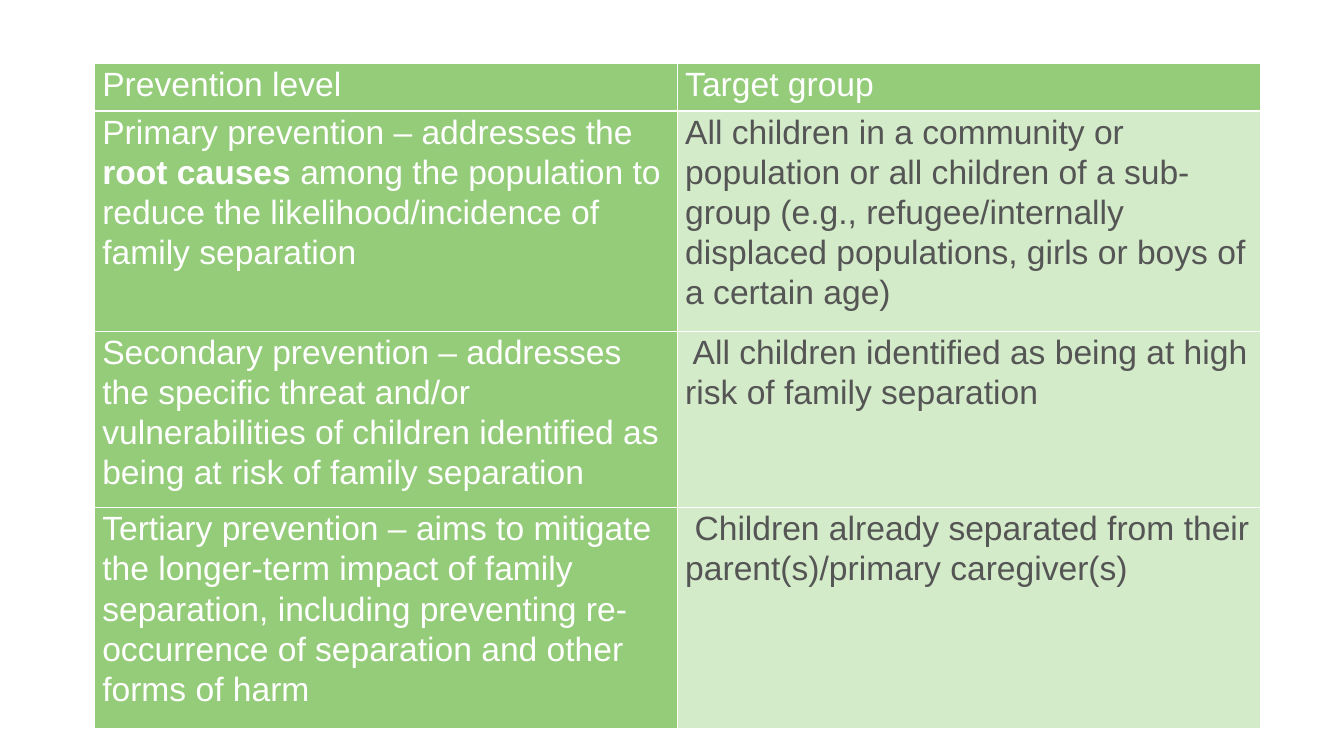
from dataclasses import dataclass

from lxml.etree import SubElement
from pptx import Presentation
from pptx.dml.color import RGBColor
from pptx.oxml.ns import qn
from pptx.util import Pt


@dataclass(frozen=True)
class Theme:
    font: str = "Arial"
    size: float = 24
    line_spacing: float = 1.07
    space_after: float = 8
    side_margin: float = 5.4
    border_width: float = 1
    border: str = "FFFFFF"
    label_fill: str = "94CC7A"
    label_text: str = "FFFFFF"
    detail_fill: str = "D4EBCA"
    detail_text: str = "545554"


class SlideBuilder:
    def __init__(self, slide, theme):
        self.slide = slide
        self.theme = theme

    def add_table(self, left, top, col_width, row_heights, rows):
        cols = len(rows[0])
        frame = self.slide.shapes.add_table(
            len(rows), cols, Pt(left), Pt(top),
            Pt(col_width * cols), Pt(sum(row_heights)))
        table = frame.table
        table.horz_banding = False
        for col in table.columns:
            col.width = Pt(col_width)
        for i, (height, texts) in enumerate(zip(row_heights, rows)):
            table.rows[i].height = Pt(height)
            for j, text in enumerate(texts):
                self.fill_cell(table.cell(i, j), text, i == 0 or j == 0)

    def fill_cell(self, cell, text, is_label):
        th = self.theme
        self.add_borders(cell)
        cell.fill.solid()
        cell.fill.fore_color.rgb = RGBColor.from_string(
            th.label_fill if is_label else th.detail_fill)
        cell.margin_left = cell.margin_right = Pt(th.side_margin)
        cell.margin_top = cell.margin_bottom = Pt(0)
        p = cell.text_frame.paragraphs[0]
        p.line_spacing = th.line_spacing
        p.space_after = Pt(th.space_after)
        for k, part in enumerate(text.split("**")):
            r = p.add_run()
            r.text = part
            r.font.name = th.font
            r.font.size = Pt(th.size)
            r.font.bold = k % 2 == 1
            r.font.color.rgb = RGBColor.from_string(
                th.label_text if is_label else th.detail_text)

    def add_borders(self, cell):
        tc_pr = cell._tc.get_or_add_tcPr()
        for side in ("lnL", "lnR", "lnT", "lnB"):
            ln = SubElement(tc_pr, qn(f"a:{side}"), w=str(Pt(self.theme.border_width)))
            fill = SubElement(ln, qn("a:solidFill"))
            SubElement(fill, qn("a:srgbClr"), val=self.theme.border)


PREVENTION_LEVELS = [
    ("Prevention level", "Target group"),
    ("Primary prevention – addresses the **root causes **among the population "
     "to reduce the likelihood/incidence of family separation",
     "All children in a community or population or all children of a sub-group "
     "(e.g., refugee/internally displaced populations, girls or boys of a certain age)"),
    ("Secondary prevention – addresses the specific threat and/or vulnerabilities "
     "of children identified as being at risk of family separation",
     " All children identified as being at high risk of family separation"),
    ("Tertiary prevention – aims to mitigate the longer-term impact of family "
     "separation, including preventing re-occurrence of separation and other forms of harm",
     " Children already separated from their parent(s)/primary caregiver(s)"),
]


def main():
    prs = Presentation()
    prs.slide_width, prs.slide_height = Pt(960), Pt(540)
    s = prs.slides.add_slide(prs.slide_layouts[6])
    builder = SlideBuilder(s, Theme())
    builder.add_table(67.7, 45.5, 416.4, [33.8, 157.5, 126, 157.5], PREVENTION_LEVELS)
    prs.save("out.pptx")


if __name__ == "__main__":
    main()
